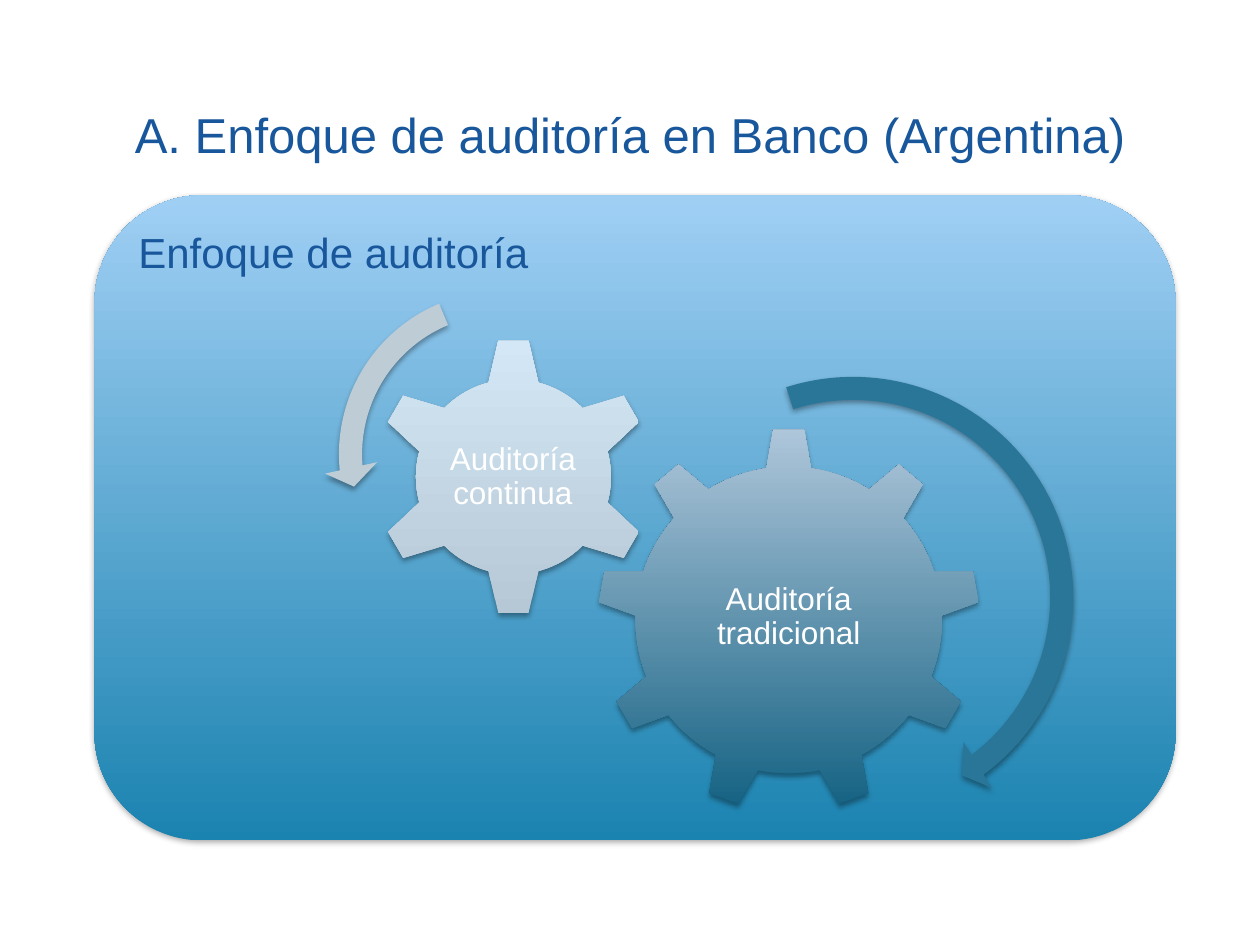
from dataclasses import dataclass

from lxml import etree
from pptx import Presentation
from pptx.dml.color import RGBColor
from pptx.enum.shapes import MSO_SHAPE
from pptx.enum.text import MSO_ANCHOR, PP_ALIGN
from pptx.oxml.ns import qn
from pptx.util import Inches, Pt

ROUND_RECT = MSO_SHAPE.ROUNDED_RECTANGLE
GEAR_6, GEAR_9 = MSO_SHAPE.GEAR_6, MSO_SHAPE.GEAR_9
ARROW, LEFT_ARROW = MSO_SHAPE.CIRCULAR_ARROW, MSO_SHAPE.LEFT_CIRCULAR_ARROW
TOP, MIDDLE = MSO_ANCHOR.TOP, MSO_ANCHOR.MIDDLE
LEFT, CENTER = PP_ALIGN.LEFT, PP_ALIGN.CENTER

FONT = "Arial"
COLORS = {
    "heading": "18579B",
    "label": "FFFFFF",
    "panel_bottom": "1B83B0",
    "panel_top": "A0CFF4",
    "large_gear_bottom": "146182",
    "large_gear_top": "AEC6DA",
    "small_gear_bottom": "B6C8D5",
    "small_gear_top": "D4E7F6",
    "large_arrow": "2A7698",
    "small_arrow": "BECCD6",
}


@dataclass
class Box:
    left: float
    top: float
    width: float
    height: float

    def lengths(self) -> list:
        return [Inches(v) for v in (self.left, self.top, self.width, self.height)]


@dataclass
class Gear:
    kind: MSO_SHAPE
    box: Box
    color: str
    label: str
    label_box: Box


@dataclass
class TurnArrow:
    """Thickness and head width in percent of the size, angles in degrees."""
    kind: MSO_SHAPE
    box: Box
    color: str
    thickness: float
    head_angle: float
    end_angle: float
    start_angle: float
    head_width: float


GEARS = [
    Gear(GEAR_9, Box(4.74, 3.4, 3.04, 3.04), "large_gear",
         "Auditoría tradicional", Box(5.35, 4.12, 1.82, 1.56)),
    Gear(GEAR_6, Box(2.97, 2.68, 2.21, 2.21), "small_gear",
         "Auditoría continua", Box(3.52, 3.24, 1.1, 1.09)),
]
ARROWS = [
    TurnArrow(ARROW, Box(4.9, 2.87, 3.74, 3.74), "large_arrow",
              4.9, 5.21, 53.37, 252.37, 5.7),
    TurnArrow(LEFT_ARROW, Box(2.57, 2.19, 2.83, 2.83), "small_arrow",
              6.5, 7.17, 174.82, 247.3, 7.5),
]


def rgb(name: str) -> RGBColor:
    return RGBColor.from_string(COLORS[name])


def add_shadowed_shape(slide, kind: MSO_SHAPE, box: Box):
    """Add a shape without outline, with a soft shadow below it."""
    s = slide.shapes.add_shape(kind, *box.lengths())
    s.line.fill.background()
    s.shadow.inherit = False
    effects = s._element.spPr.find(qn("a:effectLst"))
    shadow = etree.SubElement(
        effects, qn("a:outerShdw"), blurRad=str(Pt(3.1)), dist=str(Pt(1.8)),
        dir="5400000", rotWithShape="0")
    color = etree.SubElement(shadow, qn("a:srgbClr"), val="000000")
    etree.SubElement(color, qn("a:alpha"), val="35000")
    return s


def fill_upwards(s, color: str) -> None:
    """Shade from the bottom colour to the top colour."""
    s.fill.gradient()
    s.fill.gradient_angle = 90
    for stop, end in zip(s.fill.gradient_stops, ("bottom", "top")):
        stop.color.rgb = rgb(f"{color}_{end}")


def set_text(s, text: str, size: int, color: str, anchor, align,
             insets: tuple, line_spacing: float = 1.0) -> None:
    """Insets are left, top, right and bottom, in inches."""
    tf = s.text_frame
    tf.text = text
    tf.word_wrap = True
    tf.vertical_anchor = anchor
    (tf.margin_left, tf.margin_top,
     tf.margin_right, tf.margin_bottom) = [Inches(v) for v in insets]
    p = tf.paragraphs[0]
    p.alignment = align
    p.line_spacing = line_spacing
    font = p.runs[0].font
    font.name, font.size, font.color.rgb = FONT, Pt(size), rgb(color)


def add_panel(slide) -> None:
    s = add_shadowed_shape(slide, ROUND_RECT, Box(0.75, 1.55, 8.58, 5.12))
    fill_upwards(s, "panel")
    set_text(s, "Enfoque de auditoría", 24, "heading", TOP, LEFT,
             (0.1, 0, 0.1, 0.05))


def add_title(slide) -> None:
    s = slide.shapes.add_textbox(*Box(0.75, 0.66, 8.5, 0.8).lengths())
    set_text(s, "A. Enfoque de auditoría en Banco (Argentina)", 28, "heading",
             MIDDLE, CENTER, (0.1, 0.05, 0.1, 0.05))


def add_gear(slide, gear: Gear) -> None:
    fill_upwards(add_shadowed_shape(slide, gear.kind, gear.box), gear.color)
    label = slide.shapes.add_textbox(*gear.label_box.lengths())
    set_text(label, gear.label, 18, "label", MIDDLE, CENTER, (0.03,) * 4, 0.9)


def add_turn_arrow(slide, arrow: TurnArrow) -> None:
    s = add_shadowed_shape(slide, arrow.kind, arrow.box)
    s.fill.solid()
    s.fill.fore_color.rgb = rgb(arrow.color)
    # One degree is 60000 units; adjustments count in steps of 100000.
    angles = (arrow.head_angle, arrow.end_angle, arrow.start_angle)
    values = [arrow.thickness / 100, *(a * 0.6 for a in angles),
              arrow.head_width / 100]
    for i, value in enumerate(values):
        s.adjustments[i] = value


def main() -> None:
    prs = Presentation()
    prs.slide_width, prs.slide_height = Inches(10), Inches(7.5)
    slide = prs.slides.add_slide(prs.slide_layouts[6])
    add_panel(slide)
    add_title(slide)
    for gear in GEARS:
        add_gear(slide, gear)
    for arrow in ARROWS:
        add_turn_arrow(slide, arrow)
    prs.save("out.pptx")


if __name__ == "__main__":
    main()
